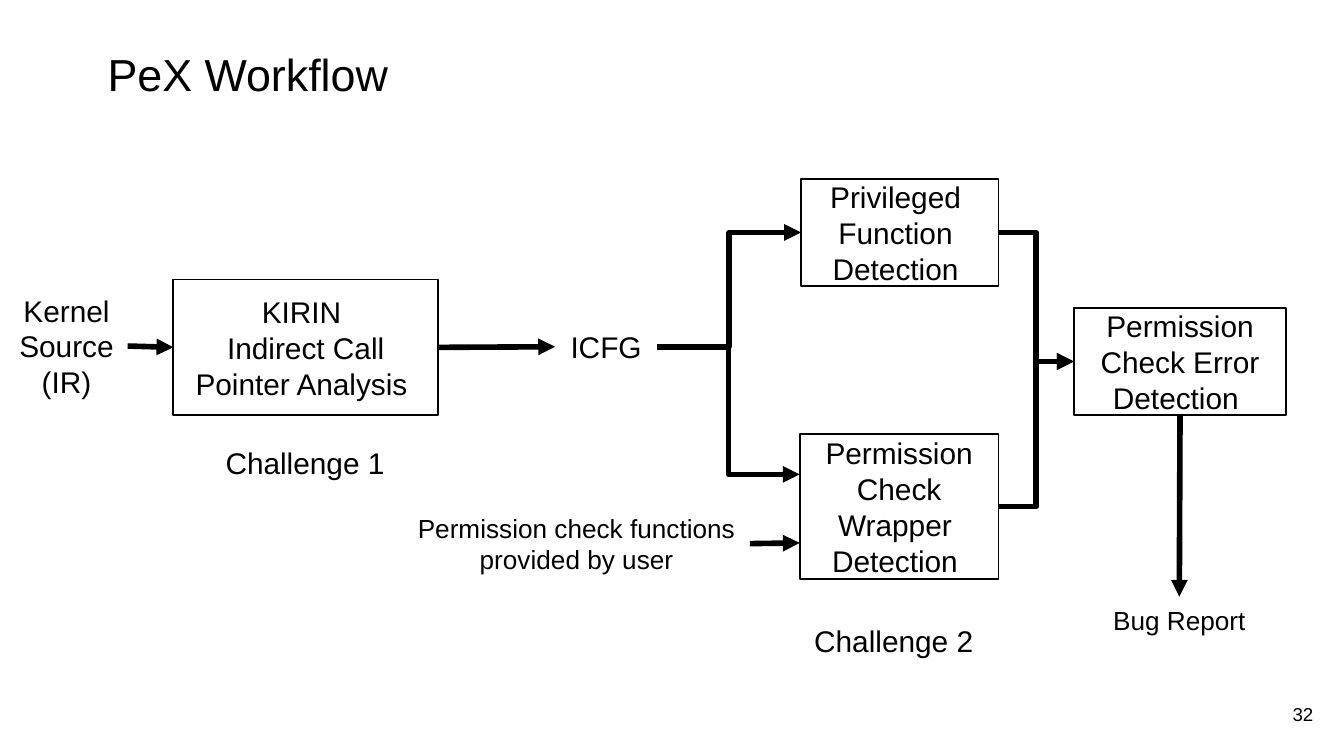
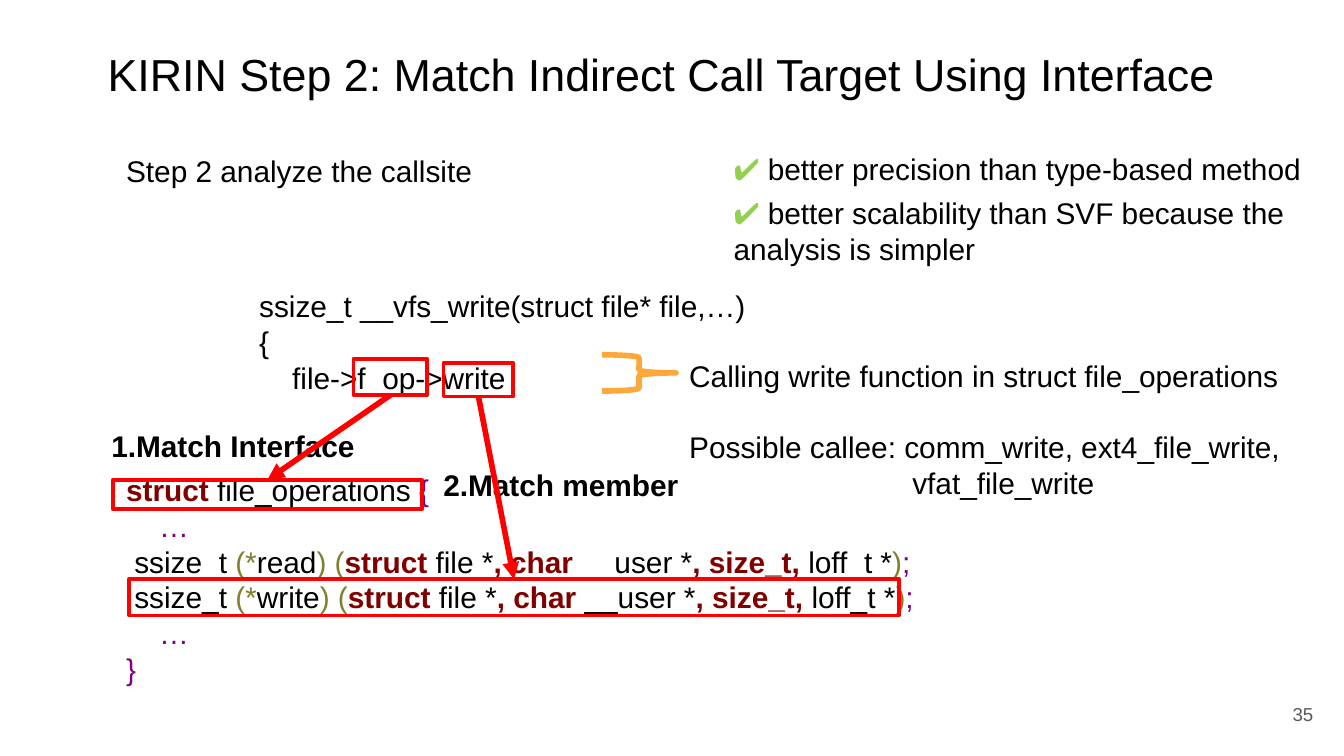
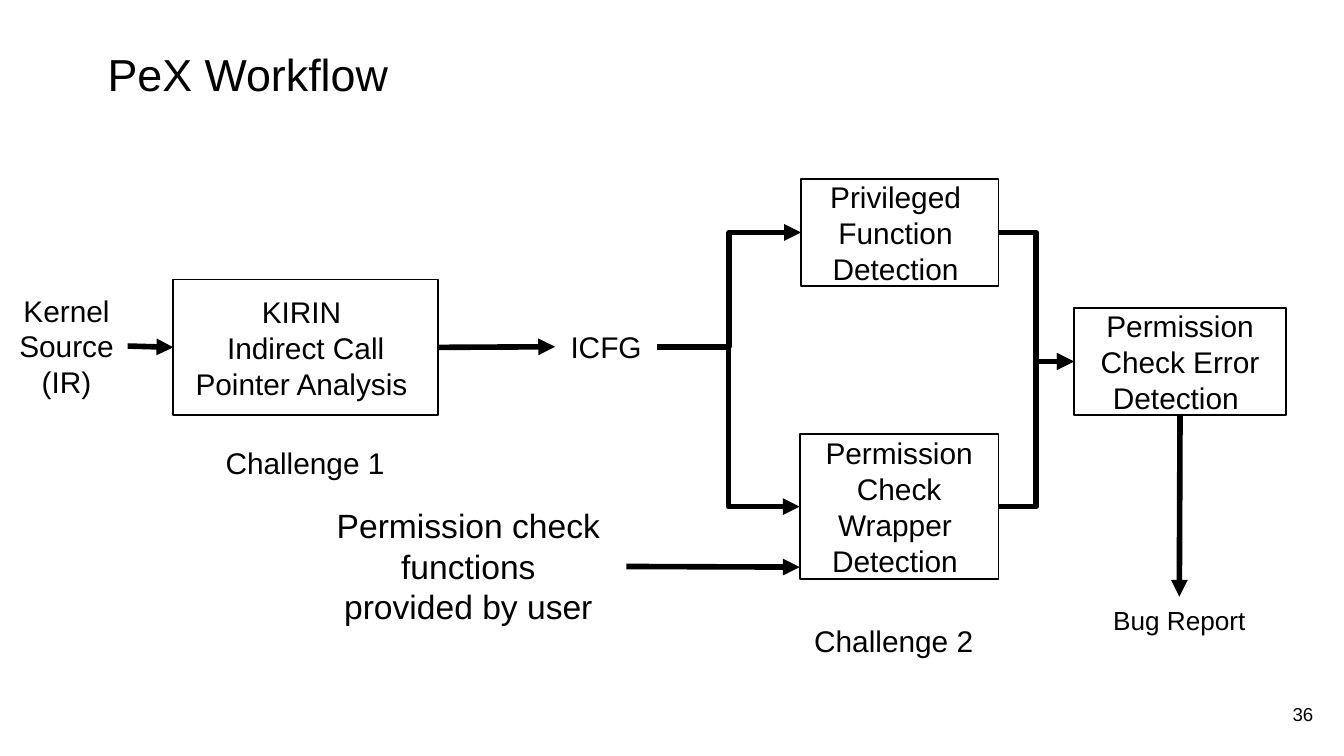
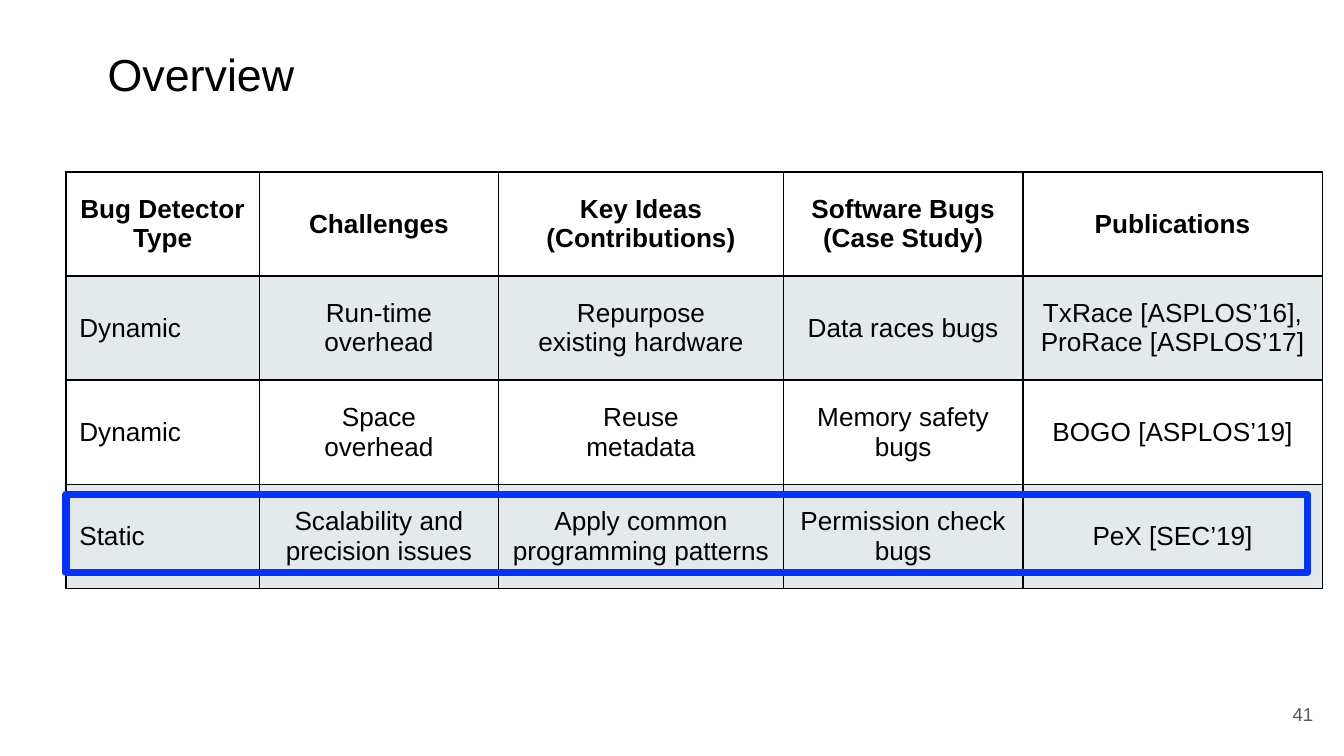
"""Build four slides on the PeX workflow, KIRIN call matching and the overview table."""
from lxml import etree
from pptx import Presentation
from pptx.dml.color import RGBColor
from pptx.enum.shapes import MSO_CONNECTOR, MSO_SHAPE
from pptx.enum.text import MSO_ANCHOR, PP_ALIGN
from pptx.oxml.ns import qn
from pptx.util import Inches, Pt

LEFT, CENTER, RIGHT = PP_ALIGN.LEFT, PP_ALIGN.CENTER, PP_ALIGN.RIGHT
TOP, MIDDLE = MSO_ANCHOR.TOP, MSO_ANCHOR.MIDDLE
STRAIGHT, ELBOW = MSO_CONNECTOR.STRAIGHT, MSO_CONNECTOR.ELBOW
RECTANGLE, BRACE = MSO_SHAPE.RECTANGLE, MSO_SHAPE.RIGHT_BRACE
TOP_SITE, LEFT_SITE, BOTTOM_SITE, RIGHT_SITE = range(4)

FONT = "Arial"
COLORS = {
    "black": "000000",
    "gray": "595959",
    "red": "FF0000",
    "blue": "0432FF",
    "orange": "FEA83A",
    "green": "92D050",
    "keyword": "800000",
    "bracket": "808030",
    "mark": "800080",
    "band": "E4E9EB",
}


def write(holder, lines=(), size=16, color="black", bold=False, align=LEFT, anchor=TOP,
          wrap=False, outline=None, weight=1):
    """Fill a text holder; a line is a string or a list of (text, color, bold)."""
    if outline:
        holder.shadow.inherit = False
        holder.fill.background()
        holder.line.color.rgb = RGBColor.from_string(COLORS[outline])
        holder.line.width = Pt(weight)
    frame = holder.text_frame
    frame.word_wrap = wrap
    frame.vertical_anchor = anchor
    for index, line in enumerate(lines):
        para = frame.add_paragraph() if index else frame.paragraphs[0]
        para.alignment = align
        for text, tint, strong in [(line, color, bold)] if isinstance(line, str) else line:
            span = para.add_run()
            span.text = text
            span.font.name = FONT
            span.font.size = Pt(size)
            span.font.bold = strong
            span.font.color.rgb = RGBColor.from_string(COLORS[tint])
    return holder


def connect(page, start, start_site, end, end_site=None, kind=STRAIGHT, color="black"):
    """Draw an arrow from a shape's site to another shape's site or to a point."""
    point = (0, 0) if end_site is not None else end
    arrow = page.shapes.add_connector(kind, 0, 0, *map(Inches, point))
    arrow.begin_connect(start, start_site)
    if end_site is not None:
        arrow.end_connect(end, end_site)
    arrow.line.color.rgb = RGBColor.from_string(COLORS[color])
    arrow.line.width = Pt(3)
    etree.SubElement(arrow.line._get_or_add_ln(), qn("a:tailEnd"), type="triangle")
    etree.SubElement(arrow._element.spPr, qn("a:effectLst"))


deck = Presentation()
deck.slide_width = Inches(10)
deck.slide_height = Inches(10) * 9 // 16

pages = []
for title, number, number_color in [
    ("PeX Workflow", "32", "black"),
    ("KIRIN Step 2: Match Indirect Call Target Using Interface", "35", "gray"),
    ("PeX Workflow", "36", "black"),
    ("Overview", "41", "gray"),
]:
    page = deck.slides.add_slide(deck.slide_layouts[5])
    heading = page.shapes.title
    heading.left, heading.top, heading.width, heading.height = map(Inches, (0.7, 0.3, 8.6, 0.5))
    write(heading, [title], size=24, wrap=True)
    box = page.shapes.add_textbox(*map(Inches, (9.27, 5.1, 0.6, 0.43)))
    write(box, [number], size=10, color=number_color, align=RIGHT, anchor=MIDDLE, wrap=True)
    pages.append(page)
first_workflow, matching, second_workflow, overview = pages

stages = {
    "kirin": ((1.29, 2.08, 1.97, 1.01), ["KIRIN ", "Indirect Call", "Pointer Analysis "]),
    "privileged": ((5.96, 1.33, 1.47, 0.8), ["Privileged ", "Function ", "Detection "]),
    "wrapper": ((5.95, 3.23, 1.48, 1.08), ["Permission Check Wrapper ", "Detection "]),
    "error": ((7.99, 2.29, 1.58, 0.8), ["Permission Check Error", "Detection "]),
}
labels = {
    "kernel": ((0.04, 2.12, 0.91, 0.91), ["Kernel", "Source", "(IR)"], 16),
    "icfg": ((4.13, 2.35, 0.76, 0.46), ["ICFG"], 16),
    "challenge 1": ((1.57, 3.26, 1.4, 0.37), ["Challenge 1"], 16),
    "challenge 2": ((5.95, 4.58, 1.4, 0.37), ["Challenge 2"], 16),
    "report": ((8.18, 4.44, 1.19, 0.34), ["Bug Report"], 14),
}
user_lines = ["Permission check functions", "provided by user"]

for page, user_at, user_size, user_wrap, user_end, wrapper_end in [
    (first_workflow, (3, 3.76, 2.58, 0.57), 14, False, (5.95, 4.04), (5.95, 3.53)),
    (second_workflow, (2.31, 3.71, 2.35, 1.01), 18, True, (5.95, 4.22), None),
]:
    node = {}
    for name, (at, lines) in stages.items():
        node[name] = write(page.shapes.add_shape(RECTANGLE, *map(Inches, at)), lines,
                           align=CENTER, anchor=MIDDLE, wrap=True, outline="black")
    for name, (at, lines, size) in labels.items():
        node[name] = write(page.shapes.add_textbox(*map(Inches, at)), lines, size=size,
                           align=CENTER, anchor=MIDDLE)
    user = write(page.shapes.add_textbox(*map(Inches, user_at)), user_lines,
                 size=user_size, align=CENTER, wrap=user_wrap)
    for start, end, kind in [
        ("kernel", "kirin", STRAIGHT),
        ("kirin", "icfg", STRAIGHT),
        ("icfg", "privileged", ELBOW),
        ("privileged", "error", ELBOW),
        ("wrapper", "error", ELBOW),
    ]:
        connect(page, node[start], RIGHT_SITE, node[end], LEFT_SITE, kind)
    if wrapper_end:
        connect(page, node["icfg"], RIGHT_SITE, wrapper_end, kind=ELBOW)
    else:
        connect(page, node["icfg"], RIGHT_SITE, node["wrapper"], LEFT_SITE, ELBOW)
    connect(page, user, RIGHT_SITE, user_end)
    connect(page, node["error"], BOTTOM_SITE, node["report"], TOP_SITE)

members = {}
for member in ("read", "write"):
    members[member] = [
        (" ssize_t ", "black", False), ("(*", "bracket", False),
        (member, "black", False), (") (", "bracket", False),
        ("struct", "keyword", True), (" file *", "black", False),
        (", char", "keyword", True), (" __user *", "black", False),
        (", size_t, ", "keyword", True), ("loff_t *", "black", False),
        (")", "bracket", False), (";", "mark", False),
    ]
dots = [("    …", "mark", False)]
struct_code = [
    [("struct ", "keyword", True), ("file_operations ", "black", False), ("{", "mark", False)],
    dots, members["read"], members["write"], dots,
    [("}", "mark", False)],
]
call_code = ["ssize_t __vfs_write(struct file* file,…)", "{", "    file->f_op->write"]
check = ("✔️ ", "green", False)
precision = [check, ("better precision than type-based method", "black", False)]
scalability = [check, ("better scalability than SVF because the analysis is simpler",
                       "black", False)]
callees = ["Calling write function in struct file_operations",
           "Possible callee: comm_write, ext4_file_write,", "vfat_file_write"]

for at, lines, bold, wrap in [
    ((1.83, 2.09, 4.11, 0.91), call_code, False, True),
    ((0.84, 3.46, 6.14, 1.72), struct_code, False, True),
    ((0.84, 1.09, 2.81, 0.37), ["Step 2 analyze the callsite"], False, False),
    ((0.73, 3.13, 2.04, 0.37), ["1.Match Interface"], True, False),
    ((3.2, 3.42, 1.97, 0.37), ["2.Match member"], True, False),
    ((5.36, 1.07, 4.51, 0.37), [precision], False, False),
    ((5.36, 1.4, 4.51, 0.64), [scalability], False, True),
]:
    write(matching.shapes.add_textbox(*map(Inches, at)), lines, bold=bold, wrap=wrap)

callee_box = write(matching.shapes.add_textbox(*map(Inches, (5.03, 2.61, 4.69, 1.18))),
                   callees, wrap=True)
callee_paras = callee_box.text_frame.paragraphs
callee_paras[1].space_before = Pt(19)
callee_paras[2]._p.get_or_add_pPr().set("marL", str(Inches(1.66)))

interface_use, interface, member_use, member_slot = [
    write(matching.shapes.add_shape(RECTANGLE, *map(Inches, at)), outline="red", weight=2)
    for at in [
        (2.63, 2.67, 0.55, 0.27),
        (0.84, 3.57, 2.3, 0.22),
        (3.3, 2.7, 0.52, 0.25),
        (0.96, 4.31, 5.73, 0.27),
    ]
]
connect(matching, interface_use, BOTTOM_SITE, interface, TOP_SITE, color="red")
connect(matching, member_use, BOTTOM_SITE, member_slot, TOP_SITE, color="red")
write(matching.shapes.add_shape(BRACE, *map(Inches, (4.48, 2.64, 0.55, 0.27))),
      outline="orange", weight=3)

left = 0.49
for width, align, rows in [
    (1.44, LEFT, [["Bug Detector Type"], ["Dynamic"], ["Dynamic"], ["Static"]]),
    (1.78, CENTER, [["Challenges"], ["Run-time", "overhead"], ["Space", "overhead"],
                    ["Scalability and", "precision issues"]]),
    (2.12, CENTER, [["Key Ideas", "(Contributions)"], ["Repurpose", "existing hardware"],
                    ["Reuse", "metadata"], ["Apply common", "programming patterns"]]),
    (1.78, CENTER, [["Software Bugs", "(Case Study)"], ["Data races bugs"],
                    ["Memory safety bugs"], ["Permission check bugs"]]),
    (2.23, CENTER, [["Publications"], ["TxRace [ASPLOS’16], ProRace [ASPLOS’17]"],
                    ["BOGO [ASPLOS’19]"], ["PeX [SEC’19]"]]),
]:
    table = overview.shapes.add_table(
        len(rows), 1, *map(Inches, (left, 1.28, width, 3.1))).table
    table.first_row = table.horz_banding = False
    for index, lines in enumerate(rows):
        cell = table.cell(index, 0)
        write(cell, lines, size=14, bold=index == 0, align=CENTER if index == 0 else align,
              wrap=True)
        cell.vertical_anchor = MIDDLE
        properties = cell._tc.get_or_add_tcPr()
        for side in ("a:lnL", "a:lnR", "a:lnT", "a:lnB"):
            border = etree.SubElement(properties, qn(side), w=str(Pt(1)))
            paint = etree.SubElement(border, qn("a:solidFill"))
            etree.SubElement(paint, qn("a:srgbClr"), val=COLORS["black"])
        if index % 2:
            cell.fill.solid()
            cell.fill.fore_color.rgb = RGBColor.from_string(COLORS["band"])
        else:
            cell.fill.background()
    left += width

write(overview.shapes.add_shape(RECTANGLE, *map(Inches, (0.49, 3.68, 9.24, 0.58))),
      outline="blue", weight=4)

deck.save("out.pptx")
